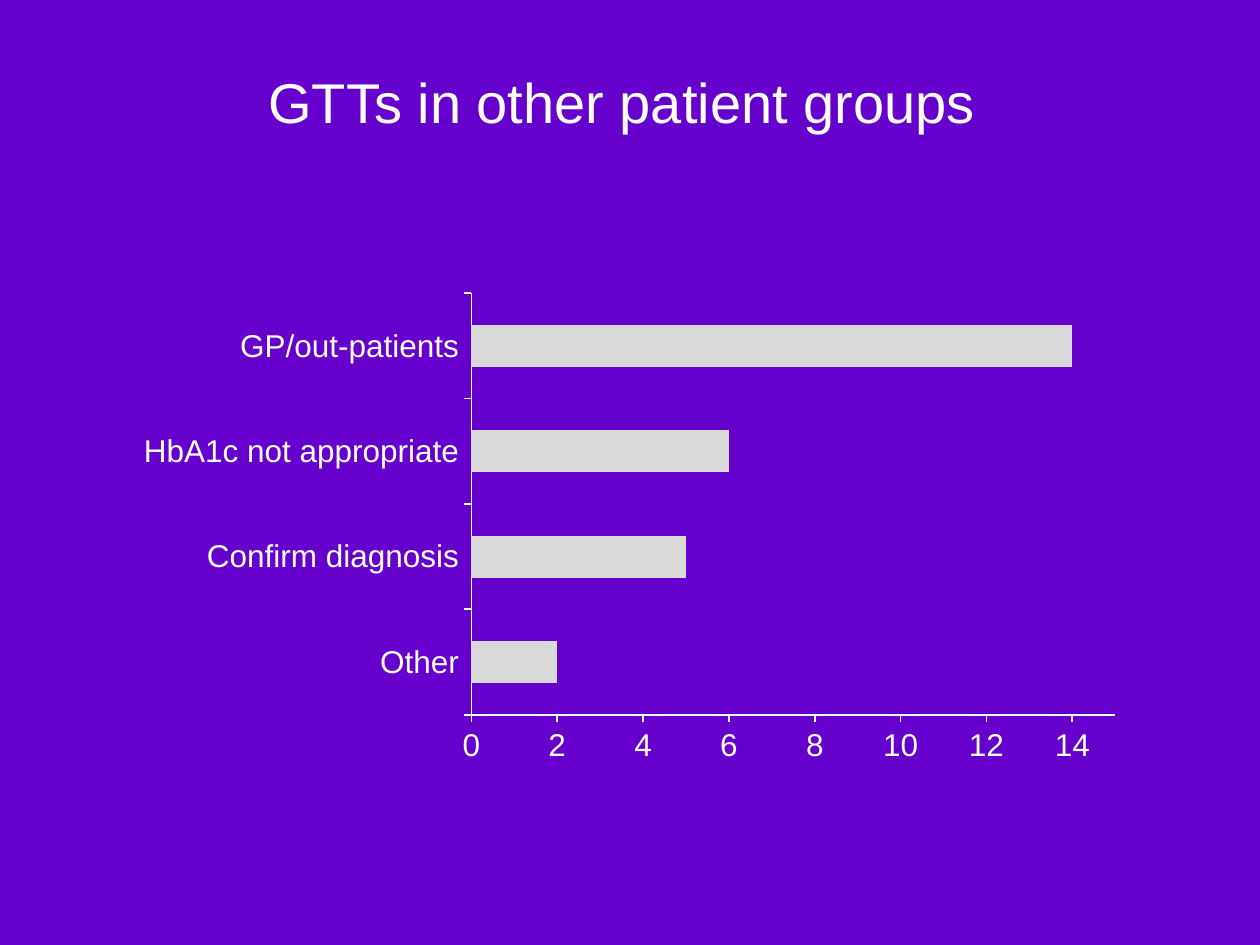
from pptx import Presentation
from pptx.chart.data import CategoryChartData
from pptx.dml.color import RGBColor
from pptx.enum.chart import XL_CHART_TYPE, XL_TICK_MARK
from pptx.enum.text import MSO_ANCHOR, PP_ALIGN
from pptx.util import Pt

TITLE = "GTTs in other patient groups "
GROUPS = [
    ("Other", 2),
    ("Confirm diagnosis", 5),
    ("HbA1c not appropriate", 6),
    ("GP/out-patients", 14),
]

FONT = "Arial"
PURPLE = RGBColor(0x66, 0x00, 0xCC)
WHITE = RGBColor(0xFF, 0xFF, 0xFF)
GREY = RGBColor(0xD9, 0xD9, 0xD9)


def set_font(font, size):
    font.name = FONT
    font.size = Pt(size)
    font.bold = False
    font.color.rgb = WHITE


def add_title(s):
    tf = s.shapes.add_textbox(Pt(39.6), Pt(31.7), Pt(640.8), Pt(72)).text_frame
    tf.word_wrap = True
    tf.vertical_anchor = MSO_ANCHOR.TOP
    tf.margin_top = Pt(7)
    p = tf.paragraphs[0]
    p.text = TITLE
    p.alignment = PP_ALIGN.CENTER
    set_font(p.font, 32)


def add_group_chart(s):
    data = CategoryChartData()
    data.categories = [name for name, _ in GROUPS]
    data.add_series("Series 1", [count for _, count in GROUPS])
    chart = s.shapes.add_chart(
        XL_CHART_TYPE.BAR_CLUSTERED, Pt(70.6), Pt(162), Pt(578.2), Pt(279.4), data
    ).chart
    chart.has_legend = False
    chart.has_title = False
    set_font(chart.font, 18)

    plot = chart.plots[0]
    plot.gap_width = 150
    plot.vary_by_categories = False
    fill = plot.series[0].format.fill
    fill.solid()
    fill.fore_color.rgb = GREY

    for axis in (chart.category_axis, chart.value_axis):
        axis.has_major_gridlines = False
        axis.major_tick_mark = XL_TICK_MARK.OUTSIDE
        axis.minor_tick_mark = XL_TICK_MARK.NONE
        axis.format.line.color.rgb = WHITE
        axis.format.line.width = Pt(1)
    chart.value_axis.minimum_scale = 0
    chart.value_axis.maximum_scale = 15
    chart.value_axis.major_unit = 2


prs = Presentation()
prs.slide_width, prs.slide_height = Pt(720), Pt(540)
s = prs.slides.add_slide(prs.slide_layouts[6])
s.background.fill.solid()
s.background.fill.fore_color.rgb = PURPLE
add_title(s)
add_group_chart(s)
prs.save("out.pptx")
